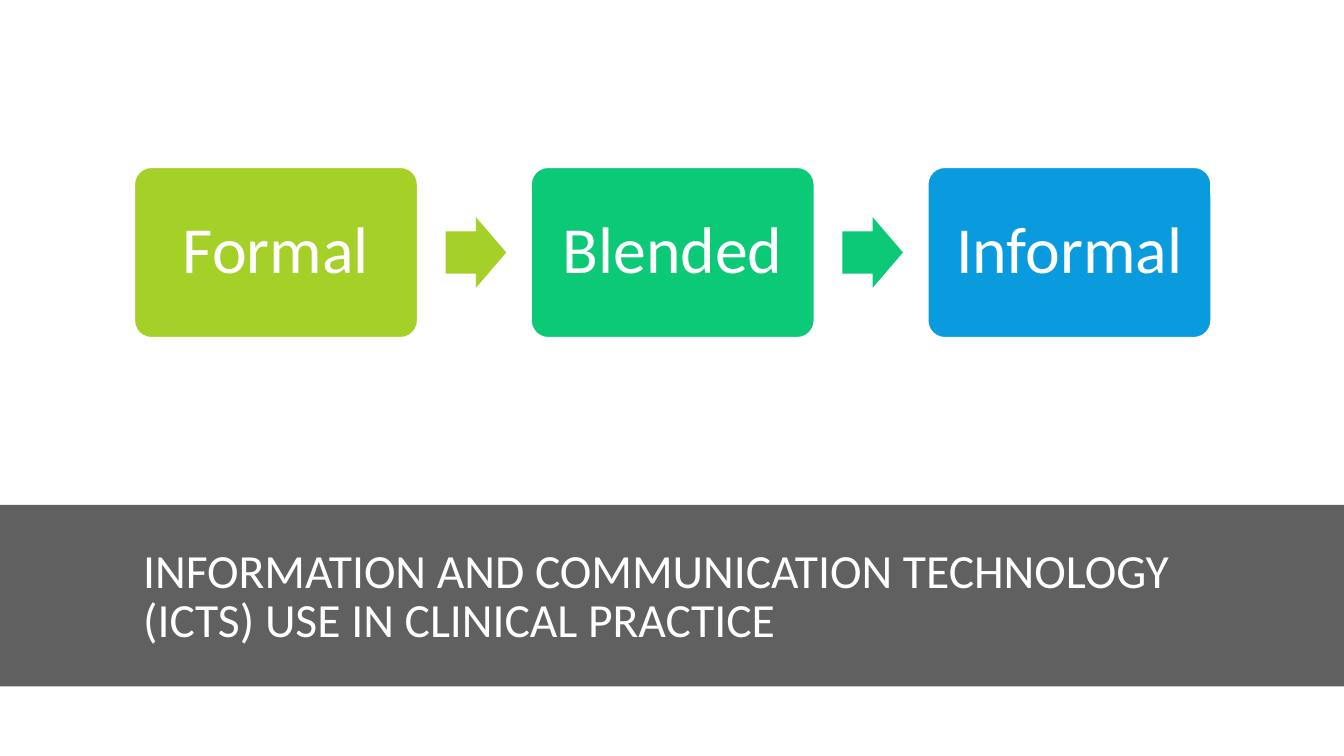
import pptx
import pptx.dml.color
import pptx.enum.shapes
import pptx.enum.text
import pptx.util

SLIDE_W, SLIDE_H = 13.33, 7.5
FONT = "Calibri"
COLORS = {
    "white": "FFFFFF",
    "band": "606060",
    "formal": "A5D028",
    "blended": "0CC978",
    "informal": "099BDD",
}
STAGES = [("Formal", "formal"), ("Blended", "blended"), ("Informal", "informal")]
GEOMETRY = pptx.enum.shapes.MSO_SHAPE
inches = pptx.util.Inches


def color(key):
    return pptx.dml.color.RGBColor.from_string(COLORS[key])


def add_block(slide, geometry, box, fill):
    block = slide.shapes.add_shape(geometry, *map(inches, box))
    block.shadow.inherit = False
    block.fill.solid()
    block.fill.fore_color.rgb = color(fill)
    block.line.fill.background()
    return block


def write(frame, text, size, align, spacing):
    frame.word_wrap = True
    frame.auto_size = pptx.enum.text.MSO_AUTO_SIZE.NONE
    frame.vertical_anchor = pptx.enum.text.MSO_ANCHOR.MIDDLE
    paragraph = frame.paragraphs[0]
    paragraph.alignment = align
    paragraph.line_spacing = spacing
    run = paragraph.add_run()
    run.text = text
    run.font.name = FONT
    run.font.size = pptx.util.Pt(size)
    run.font.color.rgb = color("white")


def add_process(slide, box):
    """Row of stages, each followed by an arrow except the last."""
    left, top, width, height = box
    stage_w = width * 0.263
    pitch = (width - stage_w) / (len(STAGES) - 1)
    arrow_w, arrow_h = 0.6, 0.7
    for index, (label, fill) in enumerate(STAGES):
        # Stage
        x = left + index * pitch
        stage = add_block(slide, GEOMETRY.ROUNDED_RECTANGLE,
                          (x, top, stage_w, height), fill)
        stage.adjustments[0] = 0.1
        stage.line.color.rgb = color("white")
        stage.line.width = pptx.util.Pt(1)
        frame = stage.text_frame
        frame.margin_left = frame.margin_right = inches(0.2)
        frame.margin_top = frame.margin_bottom = inches(0.2)
        write(frame, label, 47, pptx.enum.text.PP_ALIGN.CENTER, 0.9)

        # Arrow to the next stage
        if index < len(STAGES) - 1:
            arrow = add_block(slide, GEOMETRY.RIGHT_ARROW,
                              (x + stage_w + 0.28, top + (height - arrow_h) / 2,
                               arrow_w, arrow_h), fill)
            arrow.adjustments[0] = 0.6
            arrow.adjustments[1] = 0.5


def add_title_band(slide, box):
    """Grey band with the slide title on top of it."""
    left, top, width, height = box
    band = add_block(slide, GEOMETRY.RECTANGLE, box, "band")
    title = slide.shapes.title
    title.element.addprevious(band.element)
    title.left, title.top = inches(left + 1.32), inches(top + 0.1)
    title.width, title.height = inches(width - 2.63), inches(height - 0.15)
    write(title.text_frame,
          "INFORMATION AND COMMUNICATION TECHNOLOGY (ICTS) USE IN CLINICAL PRACTICE",
          34, pptx.enum.text.PP_ALIGN.LEFT, 0.85)


def main():
    deck = pptx.Presentation()
    deck.slide_width, deck.slide_height = inches(SLIDE_W), inches(SLIDE_H)
    slide = deck.slides.add_slide(deck.slide_layouts[5])
    add_title_band(slide, (0, SLIDE_H * 0.668, SLIDE_W, SLIDE_H * 0.24))
    add_process(slide, (SLIDE_W * 0.1, 1.66, SLIDE_W * 0.801, 1.69))
    deck.save("out.pptx")


if __name__ == "__main__":
    main()
